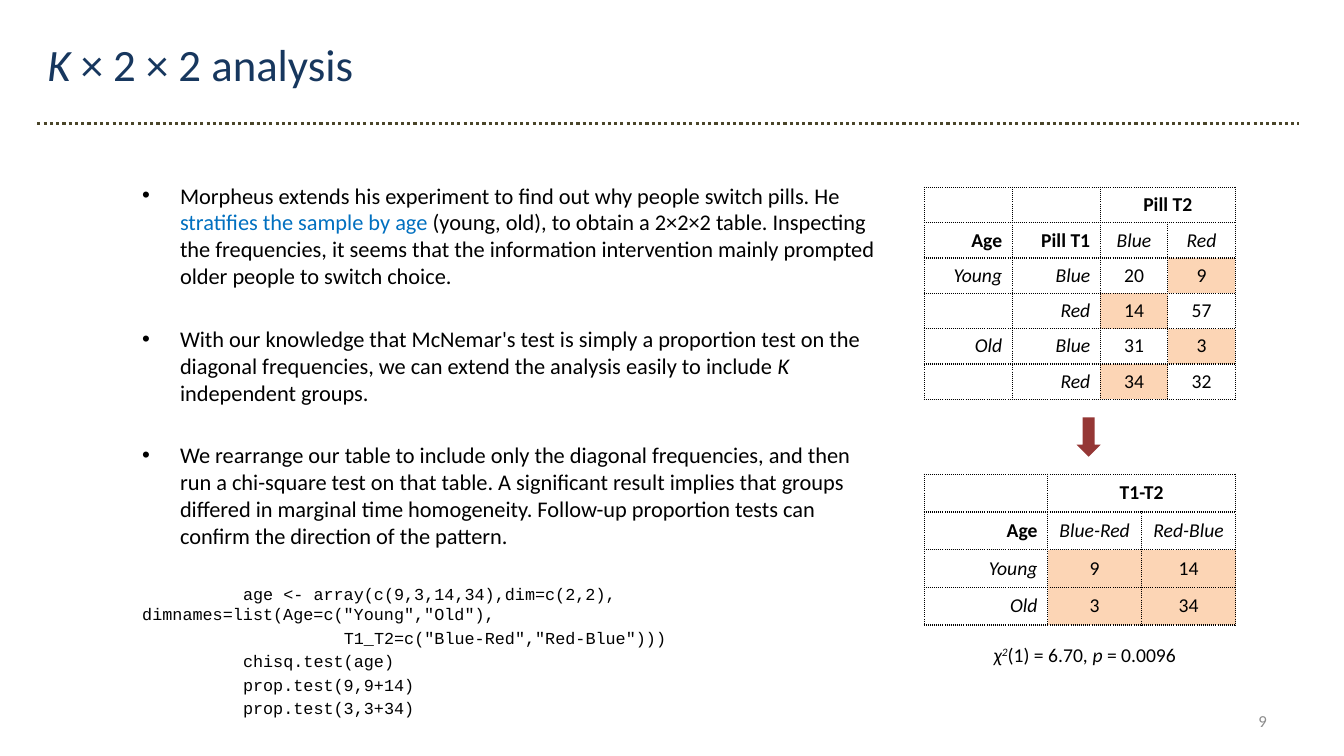
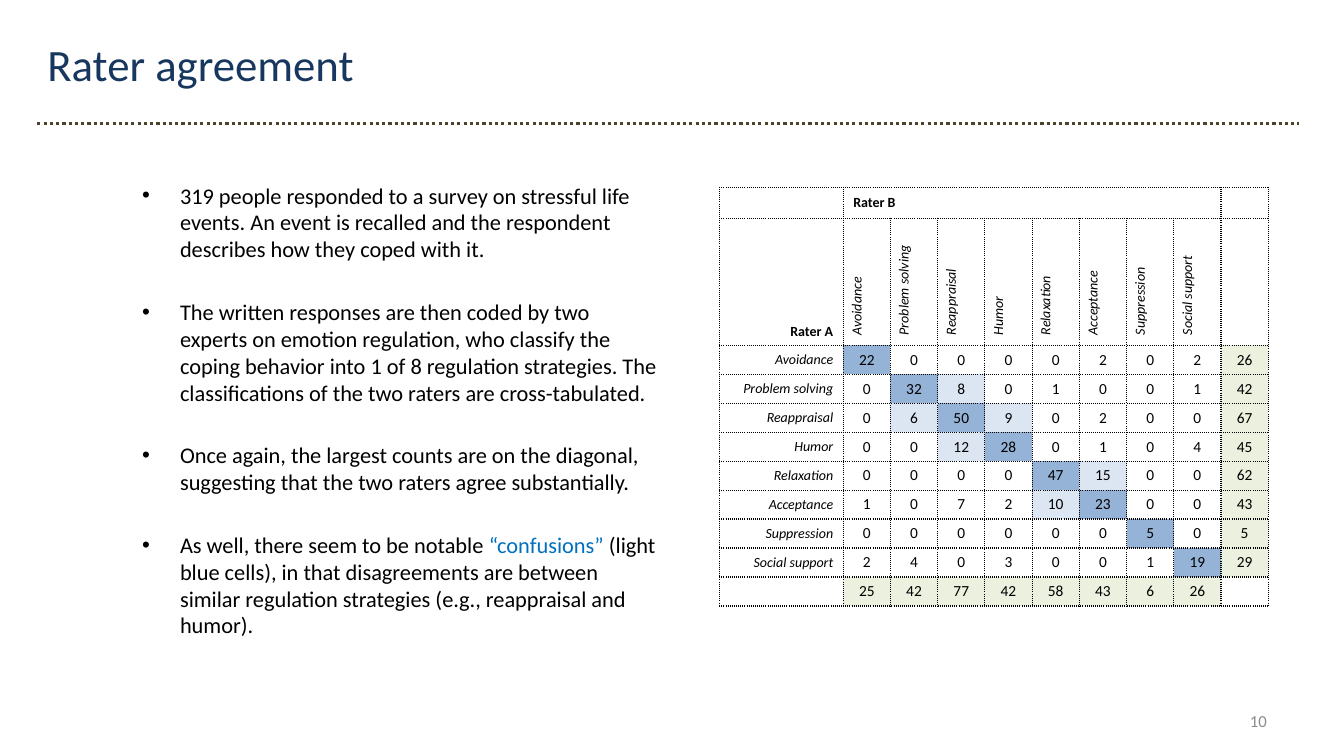
from lxml.etree import SubElement
from pptx import Presentation
from pptx.dml.color import RGBColor
from pptx.enum.dml import MSO_LINE
from pptx.enum.shapes import MSO_CONNECTOR, MSO_SHAPE
from pptx.enum.text import MSO_ANCHOR as ANCHOR, MSO_AUTO_SIZE as FIT, PP_ALIGN as ALIGN
from pptx.oxml.ns import qn
from pptx.util import Cm, Pt

NAVY = RGBColor(0x17, 0x37, 0x5E)
BLACK = RGBColor(0, 0, 0)
GREY = RGBColor(0x8C, 0x8C, 0x8C)
OLIVE = RGBColor(0x4A, 0x45, 0x2A)
ACCENT = RGBColor(0x00, 0x70, 0xC0)
DARK_RED = RGBColor(0x95, 0x37, 0x35)
PEACH = RGBColor(0xFC, 0xD5, 0xB5)
BLUE = RGBColor(0x95, 0xB3, 0xD7)
PALE_BLUE = RGBColor(0xDC, 0xE6, 0xF2)
PALE_GREEN = RGBColor(0xEB, 0xF1, 0xDE)

BOLD, ITALIC = {"bold": True}, {"italic": True}


class Deck:
    """Holds the shared style and the slide being built."""
    font, code_font = "Calibri", "Courier New"
    title_size, body_size, code_size, page_size = 32, 16, 12, 12

    def __init__(self):
        self.prs = Presentation()
        self.prs.slide_width, self.prs.slide_height = Cm(33.87), Cm(19.05)

    def add_runs(self, p, runs, size, color=BLACK, font=None):
        """Runs are plain strings or (text, options) pairs."""
        for run in runs:
            text, opts = (run, {}) if isinstance(run, str) else run
            r = p.add_run()
            r.text = text
            r.font.name, r.font.size = font or self.font, Pt(size)
            r.font.bold = opts.get("bold", False)
            r.font.italic = opts.get("italic", False)
            r.font.color.rgb = opts.get("color", color)
            if opts.get("superscript"):
                r.font._element.set("baseline", "30000")

    def place(self, sp, left, top, width, height):
        sp.left, sp.top, sp.width, sp.height = map(Cm, (left, top, width, height))
        sp.text_frame.auto_size = FIT.NONE
        sp.text_frame.vertical_anchor = ANCHOR.TOP
        return sp.text_frame

    def slide(self, title, number):
        """Start a slide with title, dotted rule and page number."""
        self.s = self.prs.slides.add_slide(self.prs.slide_layouts[1])
        tf = self.place(self.s.shapes.title, 0.94, 0.81, 29.59, 1.63)
        tf.paragraphs[0].alignment = ALIGN.LEFT
        self.add_runs(tf.paragraphs[0], title, self.title_size, NAVY)

        rule = self.s.shapes.add_connector(
            MSO_CONNECTOR.STRAIGHT, Cm(0.94), Cm(3.12), Cm(32.74), Cm(3.12))
        rule.line.color.rgb, rule.line.width = OLIVE, Pt(2.25)
        rule.line.dash_style = MSO_LINE.ROUND_DOT
        SubElement(rule._element.spPr, qn("a:effectLst"))

        tf = self.text([str(number)], 24.28, 17.65, 7.9, 1.02, self.page_size, GREY)
        tf.vertical_anchor = ANCHOR.MIDDLE
        tf.paragraphs[0].alignment = ALIGN.RIGHT

    def text(self, runs, left, top, width, height, size, color=BLACK, wrap=True):
        sp = self.s.shapes.add_textbox(*map(Cm, (left, top, width, height)))
        sp.text_frame.word_wrap = wrap
        self.add_runs(sp.text_frame.paragraphs[0], runs, size, color)
        return sp.text_frame

    def body(self, width, bullets, code=()):
        """Fill the body with bullets, then code lines as (indent, space before, text)."""
        tf = self.place(self.s.placeholders[1], 3.33, 4.45, width, 13.69)
        for i, runs in enumerate(bullets):
            p = tf.add_paragraph() if i else tf.paragraphs[0]
            p.space_before = Pt(25.6 if i else 0)
            self.add_runs(p, runs, self.body_size)
        for indent, before, line in code:
            p = tf.add_paragraph()
            p.space_before = Pt(before)
            pPr = p._p.get_or_add_pPr()
            pPr.set("marL", str(Cm(indent)))
            pPr.set("indent", "0")
            SubElement(pPr, qn("a:buNone"))
            self.add_runs(p, [line], self.code_size, font=self.code_font)

    def table(self, left, top, widths, heights, rows, size, fills, merge, labels=1):
        """Draw a dotted grid; the first `labels` columns align right."""
        frame = self.s.shapes.add_table(
            len(rows), len(widths), Cm(left), Cm(top), Cm(sum(widths)), Cm(sum(heights)))
        tbl = frame.table
        tbl.first_row = tbl.horz_banding = False
        for col, width in zip(tbl.columns, widths):
            col.width = Cm(width)
        for row, height in zip(tbl.rows, heights):
            row.height = Cm(height)
        for i, row in enumerate(rows):
            for j, content in enumerate(row):
                cell = tbl.cell(i, j)
                cell.vertical_anchor = ANCHOR.MIDDLE
                p = cell.text_frame.paragraphs[0]
                p.alignment = ALIGN.RIGHT if j < labels else ALIGN.CENTER
                if content:
                    self.add_runs(p, [content], size)
                else:
                    SubElement(p._p, qn("a:endParaRPr"), sz=str(size * 100))
                self.borders(cell)
                if (i, j) in fills:
                    cell.fill.solid()
                    cell.fill.fore_color.rgb = fills[i, j]
                else:
                    cell.fill.background()
        tbl.cell(*merge[0]).merge(tbl.cell(*merge[1]))
        return tbl

    def borders(self, cell):
        tcPr = cell._tc.get_or_add_tcPr()
        for side in "LRTB":
            ln = SubElement(tcPr, qn(f"a:ln{side}"), w=str(Pt(1)))
            fill = SubElement(ln, qn("a:solidFill"))
            SubElement(fill, qn("a:srgbClr"), val=str(BLACK))
            SubElement(ln, qn("a:prstDash"), val="sysDot")

    def down_arrow(self, left, top, width, height):
        sp = self.s.shapes.add_shape(
            MSO_SHAPE.DOWN_ARROW, *map(Cm, (left, top, width, height)))
        sp.shadow.inherit = False
        sp.fill.solid()
        sp.fill.fore_color.rgb = DARK_RED
        sp.line.fill.background()


def bold(text):
    return text, BOLD


def italic(text):
    return text, ITALIC


def stratified_slide(deck):
    deck.slide([italic("K"), " × 2 × 2 analysis"], 9)
    deck.body(19.2, [
        ["Morpheus extends his experiment to find out why people switch pills. He ",
         ("stratifies the sample by age ", {"color": ACCENT}),
         "(young, old), to obtain a 2×2×2 table. Inspecting the frequencies, it seems that "
         "the information intervention mainly prompted older people to switch choice."],
        ["With our knowledge that McNemar's test is simply a proportion test on the diagonal "
         "frequencies, we can extend the analysis easily to include ",
         italic("K"), " independent groups."],
        ["We rearrange our table to include only the diagonal frequencies, and then run a "
         "chi-square test on that table. A significant result implies that groups differed in "
         "marginal time homogeneity. Follow-up proportion tests can confirm the direction of "
         "the pattern."],
    ], [
        (2.54, 25, "age <- array(c(9,3,14,34),dim=c(2,2),"),
        (0, 0, 'dimnames=list(Age=c("Young","Old"),'),
        (5.08, 2.4, 'T1_T2=c("Blue-Red","Red-Blue")))'),
        (2.54, 2.4, "chisq.test(age)"),
        (2.54, 2.4, "prop.test(9,9+14)"),
        (2.54, 2.4, "prop.test(3,3+34)"),
    ])

    # Full table, with the switchers shaded
    blue, red, young, old = map(italic, ("Blue", "Red", "Young", "Old"))
    switchers = [(2, 3), (3, 2), (4, 3), (5, 2)]
    deck.table(23.29, 4.72, [2.22, 2.22, 1.7, 1.7], [0.89] * 6, [
        ["", "", bold("Pill T2"), ""],
        [bold("Age"), bold("Pill T1"), blue, red],
        [young, blue, "20", "9"],
        ["", red, "14", "57"],
        [old, blue, "31", "3"],
        ["", red, "34", "32"],
    ], 14, dict.fromkeys(switchers, PEACH), ((0, 2), (0, 3)), labels=2)
    deck.down_arrow(27.13, 10.52, 0.61, 0.99)

    # Rearranged table and its test
    counts = [(i, j) for i in (2, 3) for j in (1, 2)]
    deck.table(23.29, 11.95, [3.11, 2.37, 2.37], [0.95] * 4, [
        ["", bold("T1-T2"), ""],
        [bold("Age"), italic("Blue-Red"), italic("Red-Blue")],
        [young, "9", "14"],
        [old, "3", "34"],
    ], 14, dict.fromkeys(counts, PEACH), ((0, 1), (0, 2)))
    deck.text([italic("χ"), ("2", {"italic": True, "superscript": True}), "(1) = 6.70, ",
               italic("p"), " = 0.0096"], 24.79, 16.08, 5.13, 0.86, 14, wrap=False)


def rater_slide(deck):
    deck.slide(["Rater agreement"], 10)
    deck.body(13.59, [
        ["319 people responded to a survey on stressful life events. An event is recalled and "
         "the respondent describes how they coped with it."],
        ["The written responses are then coded by two experts on emotion regulation, who "
         "classify the coping behavior into 1 of 8 regulation strategies. The classifications "
         "of the two raters are cross-tabulated."],
        ["Once again, the largest counts are on the diagonal, suggesting that the two raters "
         "agree substantially."],
        ["As well, there seem to be notable ", ("“confusions” ", {"color": ACCENT}),
         "(light blue cells), in that disagreements are between similar regulation strategies "
         "(e.g., reappraisal and humor)."],
    ])

    # Cross-tabulation with computed totals
    strategies = ["Avoidance", "Problem solving", "Reappraisal", "Humor",
                  "Relaxation", "Acceptance", "Suppression", "Social support"]
    counts = [
        [22, 0, 0, 0, 0, 2, 0, 2],
        [0, 32, 8, 0, 1, 0, 0, 1],
        [0, 6, 50, 9, 0, 2, 0, 0],
        [0, 0, 12, 28, 0, 1, 0, 4],
        [0, 0, 0, 0, 47, 15, 0, 0],
        [1, 0, 7, 2, 10, 23, 0, 0],
        [0, 0, 0, 0, 0, 0, 5, 0],
        [2, 4, 0, 3, 0, 0, 1, 19],
    ]
    n = len(strategies)
    rows = [["", bold("Rater B")] + [""] * n,
            [bold("Rater A"), *map(italic, strategies), ""]]
    rows += [[italic(name), *map(str, line), str(sum(line))]
             for name, line in zip(strategies, counts)]
    rows.append(["", *(str(sum(col)) for col in zip(*counts)), ""])

    # Shading: agreement, confusions, totals
    confusions = [(1, 2), (2, 1), (2, 3), (3, 2), (4, 5), (5, 4)]
    fills = {(i + 2, j + 1): PALE_BLUE for i, j in confusions}
    for i in range(n):
        fills[i + 2, i + 1] = BLUE
        fills[i + 2, n + 1] = fills[n + 2, i + 1] = PALE_GREEN
    tbl = deck.table(18.14, 4.72, [3.11] + [1.19] * (n + 1), [0.78, 3.2] + [0.73] * (n + 1),
                     rows, 11, fills, ((0, 1), (0, n)))

    # Labels are smaller than counts, and column labels stand upright
    heads = [tbl.cell(1, j) for j in range(1, n + 1)]
    names = [tbl.cell(i, 0) for i in range(1, n + 2)]
    for cell in [tbl.cell(0, 1), *heads, *names]:
        cell.text_frame.paragraphs[0].runs[0].font.size = Pt(10)
    for cell in [tbl.cell(0, 1), *heads]:
        cell.text_frame.paragraphs[0].alignment = ALIGN.LEFT
    for cell in heads:
        cell._tc.get_or_add_tcPr().set("vert", "vert270")
    names[0].vertical_anchor = ANCHOR.BOTTOM


def main():
    deck = Deck()
    stratified_slide(deck)
    rater_slide(deck)
    deck.prs.save("out.pptx")


if __name__ == "__main__":
    main()
